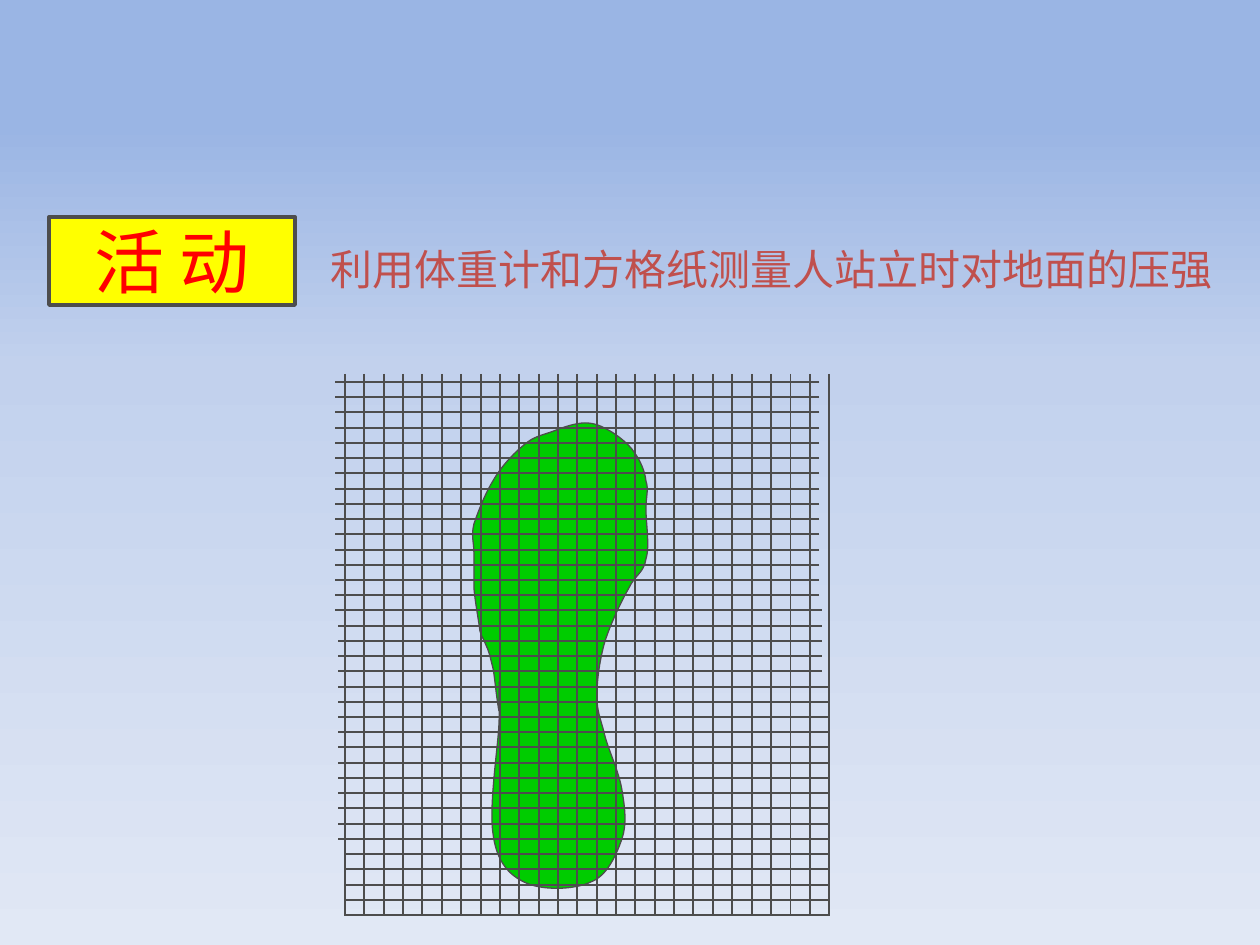
from copy import deepcopy

from lxml import etree
from pptx import Presentation
from pptx.dml.color import RGBColor
from pptx.enum.shapes import MSO_CONNECTOR, MSO_SHAPE
from pptx.enum.text import MSO_ANCHOR, MSO_AUTO_SIZE, PP_ALIGN
from pptx.oxml.ns import qn
from pptx.util import Emu, Pt

LINE = MSO_CONNECTOR.STRAIGHT
RECT = MSO_SHAPE.RECTANGLE
MIDDLE, TOP = MSO_ANCHOR.MIDDLE, MSO_ANCHOR.TOP
GROW = MSO_AUTO_SIZE.SHAPE_TO_FIT_TEXT
CENTER = PP_ALIGN.CENTER

SCALE = 914400 / 126
FONT = "Arial"
COLORS = {
    "sky": "9AB5E4",
    "haze": "C2D1ED",
    "pale": "E1E8F5",
    "ink": "4D4D4D",
    "foot": "00CC00",
    "label": "FFFF00",
    "red": "FF0000",
    "brick": "C0504D",
}
STOPS = [(0.13, "sky"), (0.39, "haze"), (1, "pale")]

START = (499, 711)
CURVES = [
    (496, 694, 495, 678, 493, 668), (490, 656, 489, 651, 486, 645),
    (485, 640, 483, 641, 480, 631), (479, 622, 475, 601, 474, 588),
    (474, 576, 474, 563, 474, 553), (474, 542, 471, 536, 474, 524),
    (478, 512, 485, 494, 493, 481), (501, 467, 513, 454, 524, 445),
    (534, 436, 544, 435, 554, 431), (564, 427, 576, 423, 585, 423),
    (595, 423, 601, 426, 610, 431), (617, 435, 629, 444, 634, 452),
    (640, 460, 645, 471, 646, 481), (649, 490, 646, 496, 646, 509),
    (646, 523, 650, 547, 646, 559), (644, 573, 635, 575, 629, 588),
    (621, 602, 609, 627, 604, 645), (599, 664, 597, 682, 597, 696),
    (597, 711, 600, 717, 604, 732), (607, 747, 619, 771, 622, 790),
    (625, 808, 627, 824, 622, 839), (616, 856, 607, 876, 591, 882),
    (575, 890, 541, 891, 524, 882), (507, 874, 496, 859, 493, 833),
    (489, 806, 498, 747, 499, 725), (500, 702, 499, 703, 499, 696),
    (499, 689, 500, 685, 499, 682),
]

LEFT, WIDTH, COLS = 345, 484, 25
TOP_ROW, HEIGHT, ROWS = 382, 533, 35
BANDS = [(335, 0, 15), (345, 20, 35), (338, 15, 30)]


def px(n):
    return Emu(round(n * SCALE))


def rgb(name):
    return RGBColor.from_string(COLORS[name])


def style(shape, fill, width):
    shape.shadow.inherit = False
    shape.fill.solid()
    shape.fill.fore_color.rgb = rgb(fill)
    shape.line.color.rgb = rgb("ink")
    shape.line.width = Pt(width)


def write(shape, text, size, color, anchor=TOP, wrap=True):
    frame = shape.text_frame
    frame.word_wrap = wrap
    frame.vertical_anchor = anchor
    para = frame.paragraphs[0]
    para.alignment = CENTER
    run = para.add_run()
    run.text = text
    run.font.name = FONT
    run.font.size = Pt(size)
    run.font.color.rgb = rgb(color)


def paint(slide):
    fill = slide.background.fill
    fill.gradient()
    fill.gradient_angle = 270
    marks = next(slide.element.iter(qn("a:gsLst")))
    marks.append(deepcopy(marks[-1]))
    for stop, (place, name) in zip(fill.gradient_stops, STOPS):
        stop.position = place
        stop.color.rgb = rgb(name)


def bend(shape):
    route = next(shape.element.iter(qn("a:path")))
    steps = route.findall(qn("a:lnTo"))
    for i in range(0, len(steps), 3):
        curve = etree.SubElement(route, qn("a:cubicBezTo"))
        for step in steps[i:i + 3]:
            curve.append(step[0])
            route.remove(step)


def add_foot(slide):
    points = [c[i:i + 2] for c in CURVES for i in (0, 2, 4)]
    pen = slide.shapes.build_freeform(*START, scale=SCALE)
    pen.add_line_segments(points, close=False)
    foot = pen.convert_to_shape()
    bend(foot)
    style(foot, "foot", 0.75)


def add_line(group, x1, y1, x2, y2, width=0.75):
    line = group.shapes.add_connector(LINE, px(x1), px(y1), px(x2), px(y2))
    line.line.color.rgb = rgb("ink")
    line.line.width = Pt(width)
    etree.SubElement(line.element.spPr, qn("a:effectLst"))


def add_grid(slide):
    group = slide.shapes.add_group_shape()
    for col in range(COLS + 1):
        x = round(LEFT + WIDTH * col / COLS)
        add_line(group, x, 374, x, 916, 0.5 if col == 23 else 0.75)
    for left, first, last in BANDS:
        for row in range(first, last + 1):
            y = round(TOP_ROW + HEIGHT * row / ROWS)
            add_line(group, left + WIDTH, y, left, y)


def add_label(slide):
    box = slide.shapes.add_shape(RECT, px(49), px(217), px(246), px(88))
    style(box, "label", 2.25)
    write(box, "活 动", size=40, color="red", anchor=MIDDLE, wrap=False)


def add_title(slide):
    box = slide.shapes.add_textbox(px(282), px(237), px(978), px(64))
    write(box, "利用体重计和方格纸测量人站立时对地面的压强", size=24, color="brick")
    box.text_frame.auto_size = GROW


def main():
    deck = Presentation()
    deck.slide_width, deck.slide_height = px(1260), px(945)
    slide = deck.slides.add_slide(deck.slide_layouts[6])
    paint(slide)
    add_foot(slide)
    add_grid(slide)
    add_label(slide)
    add_title(slide)
    deck.save("out.pptx")


if __name__ == "__main__":
    main()
